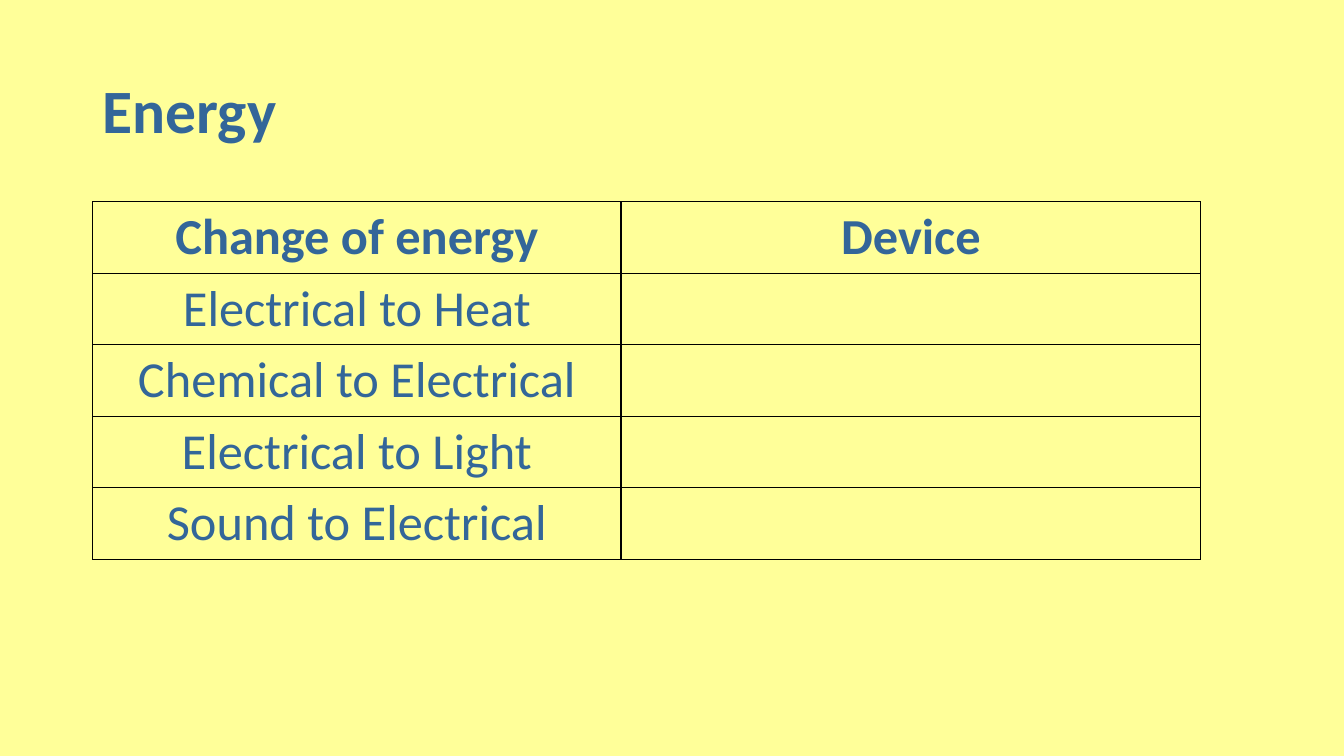
"""Build the Energy slide with its table of energy changes and devices."""
import dataclasses

import lxml.etree
import pptx
import pptx.dml.color
import pptx.enum.text
import pptx.oxml.ns
import pptx.slide
import pptx.table
import pptx.text.text
import pptx.util

Inches = pptx.util.Inches
Pt = pptx.util.Pt
RGB = pptx.dml.color.RGBColor
Align = pptx.enum.text.PP_ALIGN
qn = pptx.oxml.ns.qn


@dataclasses.dataclass(frozen=True)
class Theme:
    background: RGB = RGB.from_string("FFFF99")
    ink: RGB = RGB.from_string("336699")
    border: str = "000000"
    border_width: int = Pt(1)
    font: str = "Calibri"
    title_size: int = Pt(44)
    cell_size: int = Pt(36)


@dataclasses.dataclass(frozen=True)
class Row:
    change: str
    device: str = ""
    bold: bool = False


THEME = Theme()
ROWS = (
    Row("Change of energy", "Device", bold=True),
    Row("Electrical to Heat"),
    Row("Chemical to Electrical"),
    Row("Electrical to Light"),
    Row("Sound to Electrical"),
)
COL_WIDTHS = (5.24, 5.75)
ROW_HEIGHT = 0.71
LEFT = Inches(0.92)


def write(p: pptx.text.text._Paragraph, text: str, size: int, bold: bool) -> None:
    r = p.add_run()
    r.text = text
    formats = {"name": THEME.font, "size": size, "bold": bold}
    for name, value in formats.items():
        setattr(r.font, name, value)
    r.font.color.rgb = THEME.ink


def add_borders(cell: pptx.table._Cell) -> None:
    tc_pr = cell._tc.get_or_add_tcPr()
    for side in ("lnL", "lnR", "lnT", "lnB"):
        ln = lxml.etree.SubElement(tc_pr, qn(f"a:{side}"), w=str(THEME.border_width))
        fill = lxml.etree.SubElement(ln, qn("a:solidFill"))
        lxml.etree.SubElement(fill, qn("a:srgbClr"), val=THEME.border)


def add_title(s: pptx.slide.Slide, text: str) -> None:
    sp = s.shapes.add_textbox(LEFT, Inches(0.4), Inches(11.5), Inches(1.45))
    tf = sp.text_frame
    formats = {"word_wrap": True, "vertical_anchor": pptx.enum.text.MSO_ANCHOR.MIDDLE}
    for name, value in formats.items():
        setattr(tf, name, value)
    p = tf.paragraphs[0]
    p.line_spacing = 0.9
    write(p, text, THEME.title_size, True)


def add_energy_table(s: pptx.slide.Slide, rows: tuple[Row, ...]) -> None:
    table = s.shapes.add_table(
        len(rows), len(COL_WIDTHS), LEFT, Inches(2),
        Inches(sum(COL_WIDTHS)), Inches(ROW_HEIGHT * len(rows)),
    ).table
    for name, value in {"first_row": False, "horz_banding": False}.items():
        setattr(table, name, value)
    for column, width in zip(table.columns, COL_WIDTHS):
        column.width = Inches(width)
    for i, row in enumerate(rows):
        table.rows[i].height = Inches(ROW_HEIGHT)
        for j, text in enumerate((row.change, row.device)):
            cell = table.cell(i, j)
            add_borders(cell)
            cell.fill.background()
            if text:
                p = cell.text_frame.paragraphs[0]
                p.alignment = Align.CENTER
                write(p, text, THEME.cell_size, row.bold)


def main() -> None:
    prs = pptx.Presentation()
    for name, value in {"slide_width": 13.33, "slide_height": 7.5}.items():
        setattr(prs, name, Inches(value))
    s = prs.slides.add_slide(prs.slide_layouts[6])
    s.background.fill.solid()
    s.background.fill.fore_color.rgb = THEME.background
    add_title(s, "Energy")
    add_energy_table(s, ROWS)
    prs.save("out.pptx")


if __name__ == "__main__":
    main()
